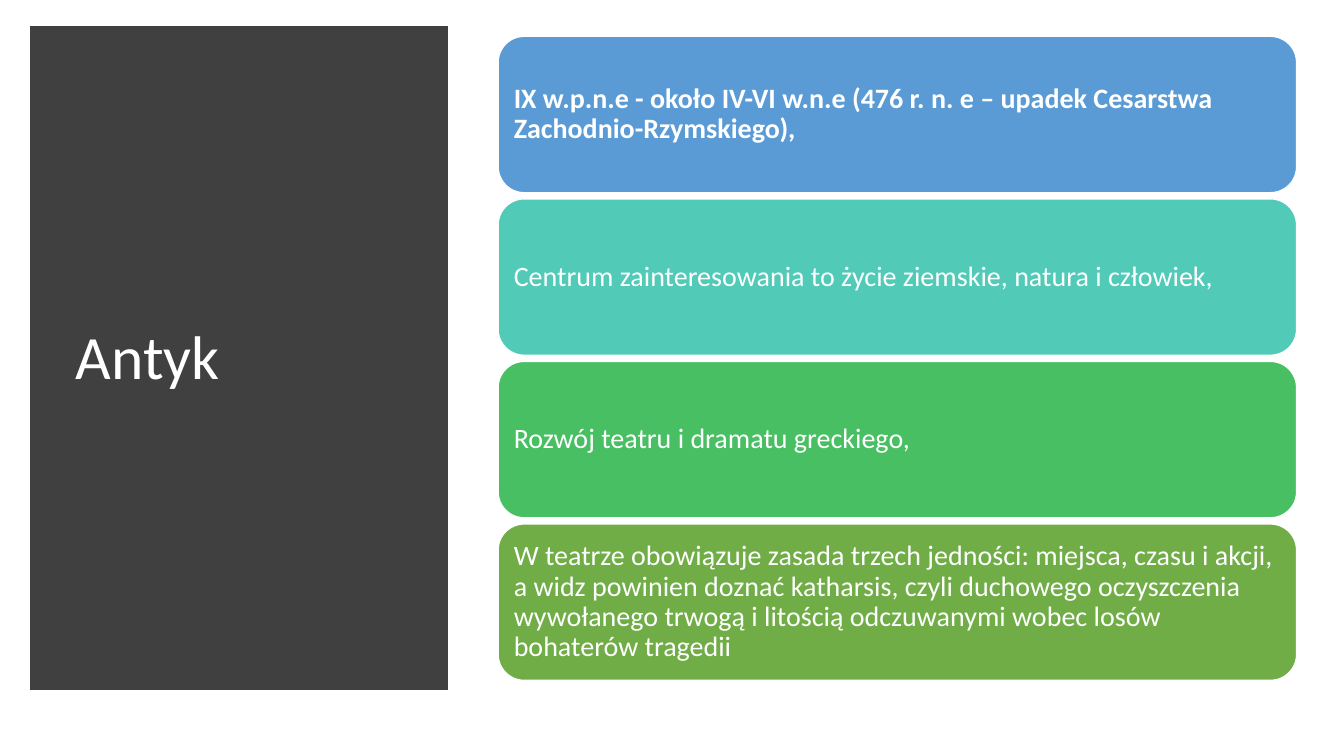
from lxml import etree
from pptx import Presentation, util as u
from pptx.dml.color import RGBColor
from pptx.enum import shapes, text
from pptx.oxml.ns import qn

WIDTH, HEIGHT = 13.33, 7.5
FONT = "Calibri"
COLORS = {
    "white": "FFFFFF",
    "panel": "404040",
    "blue": "5B9BD5",
    "teal": "52CAB8",
    "green": "49BF64",
    "olive": "70AD47",
}
FACTS = [
    ("IX w.p.n.e - około IV-VI w.n.e (476 r. n. e – upadek Cesarstwa Zachodnio-Rzymskiego),", "blue", True),
    ("Centrum zainteresowania to życie ziemskie, natura i człowiek,", "teal", False),
    ("Rozwój teatru i dramatu greckiego,", "green", False),
    (
        "W teatrze obowiązuje zasada trzech jedności: miejsca, czasu i akcji, "
        "a widz powinien doznać katharsis, czyli duchowego oczyszczenia "
        "wywołanego trwogą i litością odczuwanymi wobec losów bohaterów tragedii",
        "olive",
        False,
    ),
]


def color(name):
    return RGBColor.from_string(COLORS[name])


def write(shape, words, size=20, bold=False, inset=0.08, ink="white"):
    frame = shape.text_frame
    frame.word_wrap = True
    frame.auto_size = text.MSO_AUTO_SIZE.NONE
    frame.vertical_anchor = text.MSO_ANCHOR.MIDDLE
    frame.margin_left = frame.margin_right = u.Inches(inset)
    frame.margin_top = frame.margin_bottom = u.Inches(inset)
    para = frame.paragraphs[0]
    para.alignment = text.PP_ALIGN.LEFT
    para.line_spacing = 0.9
    span = para.add_run()
    span.text = words
    span.font.name = FONT
    span.font.size = u.Pt(size)
    span.font.bold = bold
    span.font.color.rgb = color(ink)


def add_block(page, kind, box, fill, line, weight):
    block = page.shapes.add_shape(kind, *(u.Inches(length) for length in box))
    block.shadow.inherit = False
    block.fill.solid()
    block.fill.fore_color.rgb = color(fill)
    block.line.color.rgb = color(line)
    block.line.width = u.Pt(weight)
    return block


def add_title_panel(page, box, heading):
    left, top, width, height = box
    panel = add_block(page, shapes.MSO_SHAPE.RECTANGLE, box, "panel", "panel", 10)
    outline = panel.element.spPr.find(qn("a:ln"))
    etree.SubElement(outline, qn("a:miter"), lim="800000")
    title = page.shapes.title
    title.element.addprevious(panel.element)
    title.left = u.Inches(left + 0.07 * width)
    title.top = u.Inches(top + 0.057 * height)
    title.width = u.Inches(0.865 * width)
    title.height = u.Inches(0.89 * height)
    write(title, heading, size=44, inset=0.1)


def add_fact_list(page, box, facts, gap=0.06):
    left, top, width, height = box
    row = (height - gap * (len(facts) - 1)) / len(facts)
    for index, (words, fill, bold) in enumerate(facts):
        place = (left, top + index * (row + gap), width, row)
        card = add_block(page, shapes.MSO_SHAPE.ROUNDED_RECTANGLE, place, fill, "white", 1)
        write(card, words, bold=bold)


def main():
    deck = Presentation()
    deck.slide_width = u.Inches(WIDTH)
    deck.slide_height = u.Inches(HEIGHT)
    page = deck.slides.add_slide(deck.slide_layouts[5])
    add_title_panel(page, (0.37, 0.33, 4, 6.45), "Antyk")
    add_fact_list(page, (4.94, 0.36, 7.92, 6.39), FACTS)
    deck.save("out.pptx")


if __name__ == "__main__":
    main()
